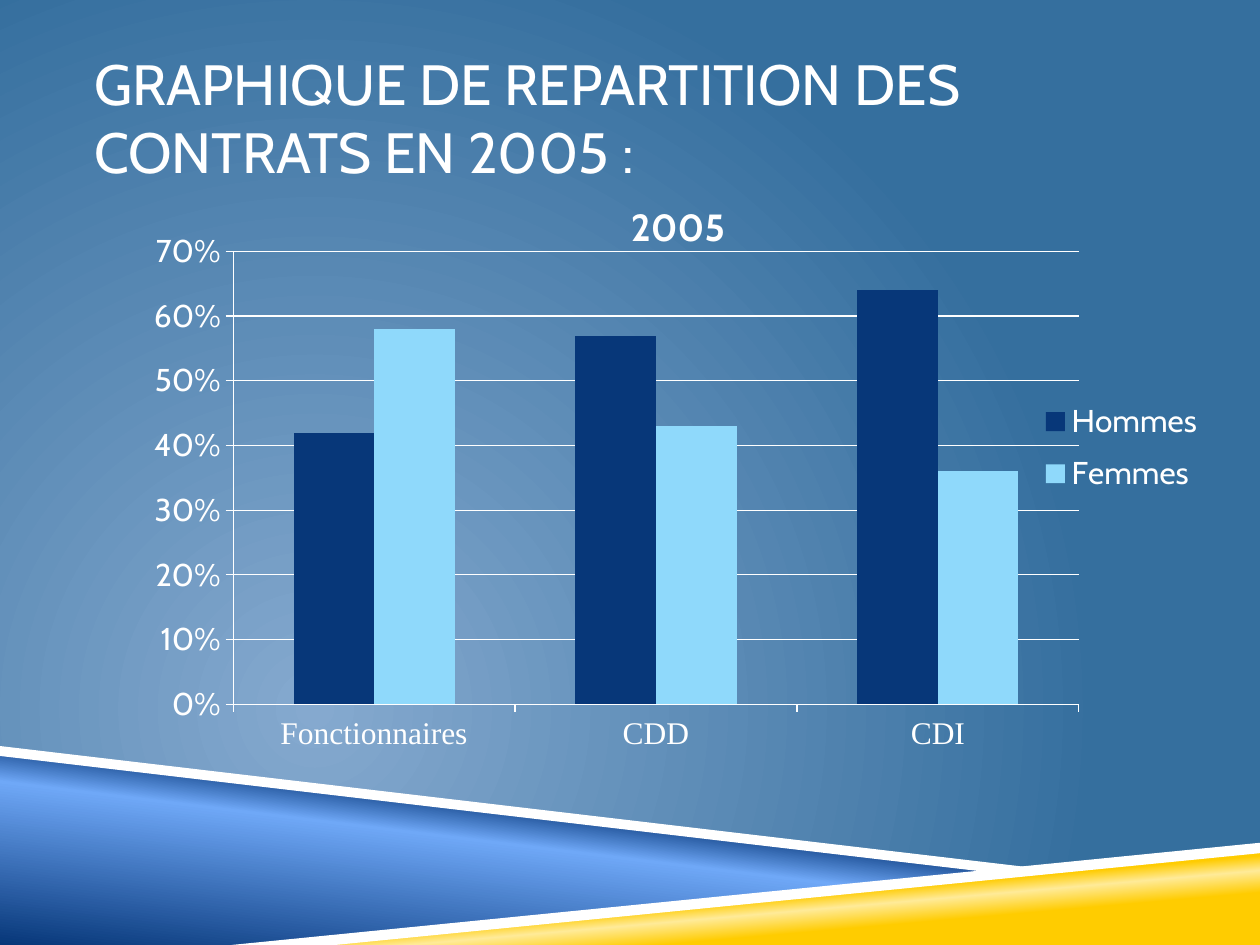
"""Build the slide charting contract types by gender in 2005."""
from dataclasses import dataclass
from typing import Any

from lxml import etree
from pptx import Presentation
from pptx.chart.data import CategoryChartData
from pptx.dml.color import RGBColor
from pptx.enum.chart import XL_CHART_TYPE, XL_LEGEND_POSITION, XL_TICK_MARK
from pptx.enum.text import MSO_ANCHOR, MSO_AUTO_SIZE, PP_ALIGN
from pptx.oxml.ns import qn
from pptx.util import Cm, Pt

COLUMNS = XL_CHART_TYPE.COLUMN_CLUSTERED
RIGHT = XL_LEGEND_POSITION.RIGHT
OUTSIDE = XL_TICK_MARK.OUTSIDE
MIDDLE = MSO_ANCHOR.MIDDLE
LEFT = PP_ALIGN.LEFT
NO_FIT = MSO_AUTO_SIZE.NONE

COLORS = {
    "white": "FFFFFF", "navy": "073779", "blue": "6FA8F7", "sky": "8FD9FB",
    "gold": "FFCC00", "cream": "FFEB99", "mist": "85A9CF", "ocean": "356F9E",
}
WIDTH, HEIGHT = 25.4, 19.05
CHART_WIDTH, CHART_HEIGHT = 21.64, 11.94
Stops = tuple[tuple[int, str], ...]


@dataclass(frozen=True)
class Band:
    points: tuple[tuple[float, float], ...]
    stops: Stops
    angle: int = 0


@dataclass(frozen=True)
class Series:
    name: str
    values: tuple[float, ...]
    color: str


BANDS = (
    Band(((0, 15.16), (20.12, 17.58), (5.08, HEIGHT), (0, HEIGHT)),
         ((0, "navy"), (52, "blue"), (66, "navy")), 277),
    Band(((5.03, HEIGHT), (WIDTH, 17.07), (WIDTH, HEIGHT)),
         ((28, "gold"), (40, "cream"), (48, "gold")), 265),
    Band(((0, 15.04), (0, 15.24), (20.07, 17.6), (21.13, 17.53)), ((0, "white"),)),
    Band(((WIDTH, 16.99), (4.67, HEIGHT), (6.76, HEIGHT), (WIDTH, 17.2)), ((0, "white"),)),
)
CATEGORIES = ("Fonctionnaires", "CDD", "CDI")
SERIES = (
    Series("Hommes", (0.42, 0.57, 0.64), "navy"),
    Series("Femmes", (0.58, 0.43, 0.36), "sky"),
)


def rgb(name: str) -> RGBColor:
    """Return a named colour."""
    return RGBColor.from_string(COLORS[name])


def apply(target: Any, values: dict[str, Any]) -> None:
    """Set every attribute listed in values."""
    for name, value in values.items():
        setattr(target, name, value)


def style_font(font: Any, **values: Any) -> None:
    """Make a font white and apply the given values."""
    apply(font, values)
    font.color.rgb = rgb("white")


def set_gradient(owner: Any, fill: Any, stops: Stops) -> Any:
    """Give an owner a gradient with these stops and return its element."""
    fill.gradient()
    gradient = owner._element.find(".//" + qn("a:gradFill"))
    for child in list(gradient):
        gradient.remove(child)
    stop_list = etree.SubElement(gradient, qn("a:gsLst"))
    for position, color in stops:
        stop = etree.SubElement(stop_list, qn("a:gs"), pos=str(position * 1000))
        etree.SubElement(stop, qn("a:srgbClr"), val=COLORS[color])
    return gradient


def paint_background(page: Any) -> None:
    """Paint the radial background."""
    gradient = set_gradient(page, page.background.fill, ((0, "mist"), (100, "ocean")))
    circle = etree.SubElement(gradient, qn("a:path"), path="circle")
    etree.SubElement(circle, qn("a:fillToRect"), l="50000", t="100000", r="100000", b="50000")


def draw_band(page: Any, band: Band) -> None:
    """Draw one slanted band at the foot of the slide."""
    points = [(Cm(x), Cm(y)) for x, y in band.points]
    builder = page.shapes.build_freeform(*points[0], scale=1.0)
    builder.add_line_segments(points[1:], close=True)
    shape = builder.convert_to_shape()
    shape.shadow.inherit = False
    shape.line.fill.background()
    if len(band.stops) == 1:
        shape.fill.solid()
        shape.fill.fore_color.rgb = rgb(band.stops[0][1])
    else:
        gradient = set_gradient(shape, shape.fill, band.stops)
        etree.SubElement(gradient, qn("a:lin"), ang=str(band.angle * 60000), scaled="0")


def write_title(page: Any, text: str) -> None:
    """Fill the title placeholder and bring it in front of the bands."""
    title = page.shapes.title
    apply(title, {"left": Cm(1.9), "top": Cm(0.76), "width": Cm(21.6), "height": Cm(3.18)})
    frame = title.text_frame
    frame.text = text
    apply(frame, {
        "margin_left": 0, "margin_right": 0, "margin_top": Cm(0.13), "margin_bottom": Cm(0.13),
        "vertical_anchor": MIDDLE, "word_wrap": True, "auto_size": NO_FIT,
    })
    para = frame.paragraphs[0]
    para.alignment = LEFT
    style_font(para.runs[0].font, name="Cabin", size=Pt(32.4))
    page.shapes._spTree.append(title._element)


def place(element: Any, index: int, inner: bool = False, **lengths: float) -> None:
    """Place a chart part by lengths in centimetres from the chart's corner."""
    for old in element.findall(qn("c:layout")):
        element.remove(old)
    layout = etree.Element(qn("c:layout"))
    manual = etree.SubElement(layout, qn("c:manualLayout"))
    if inner:
        etree.SubElement(manual, qn("c:layoutTarget"), val="inner")
    for mode in ("xMode", "yMode"):
        etree.SubElement(manual, qn(f"c:{mode}"), val="edge")
    for name, length in lengths.items():
        whole = CHART_WIDTH if name in "xw" else CHART_HEIGHT
        etree.SubElement(manual, qn(f"c:{name}"), val=str(length / whole))
    element.insert(index, layout)


def style_line(line: Any) -> None:
    """Make a chart line thin and white."""
    line.color.rgb = rgb("white")
    line.width = Pt(0.75)


def draw_chart(page: Any) -> None:
    """Draw the clustered column chart."""
    data = CategoryChartData(number_format="0%")
    data.categories = CATEGORIES
    for entry in SERIES:
        data.add_series(entry.name, entry.values)
    chart = page.shapes.add_chart(
        COLUMNS, Cm(2.84), Cm(3.53), Cm(CHART_WIDTH), Cm(CHART_HEIGHT), data).chart
    style_font(chart.font, name="Cabin", size=Pt(18))

    chart.has_title = True
    heading = chart.chart_title.text_frame
    heading.text = "2005"
    style_font(heading.paragraphs[0].runs[0].font, name="Cabin", size=Pt(21.6), bold=True)
    place(chart.chart_title._element, 1, x=9.74, y=0.37)

    chart.has_legend = True
    apply(chart.legend, {"position": RIGHT, "include_in_layout": False})
    style_font(chart.legend.font, name="Cabin", size=Pt(18))
    place(chart.legend._element, 1, x=18.22, y=4.3, w=3.25, h=2.39)
    place(chart._chartSpace.chart.plotArea, 0, inner=True, x=1.86, y=1.54, w=17.05, h=9.13)

    plot = chart.plots[0]
    apply(plot, {"gap_width": 150, "overlap": 0, "vary_by_categories": False})
    for series, entry in zip(plot.series, SERIES):
        series.format.fill.solid()
        series.format.fill.fore_color.rgb = rgb(entry.color)

    for axis, font in ((chart.category_axis, "Times New Roman"), (chart.value_axis, "Cabin")):
        axis.major_tick_mark = OUTSIDE
        style_line(axis.format.line)
        style_font(axis.tick_labels.font, name=font, size=Pt(18))
    axis = chart.value_axis
    apply(axis, {"minimum_scale": 0, "maximum_scale": 0.7, "major_unit": 0.1,
                 "has_major_gridlines": True})
    apply(axis.tick_labels, {"number_format": "0%", "number_format_is_linked": False})
    style_line(axis.major_gridlines.format.line)


def main() -> None:
    """Build and save the deck."""
    deck = Presentation()
    apply(deck, {"slide_width": Cm(WIDTH), "slide_height": Cm(HEIGHT)})
    page = deck.slides.add_slide(deck.slide_layouts[5])
    paint_background(page)
    for band in BANDS:
        draw_band(page, band)
    write_title(page, "GRAPHIQUE DE REPARTITION DES CONTRATS EN 2005 :")
    draw_chart(page)
    deck.save("out.pptx")


if __name__ == "__main__":
    main()
